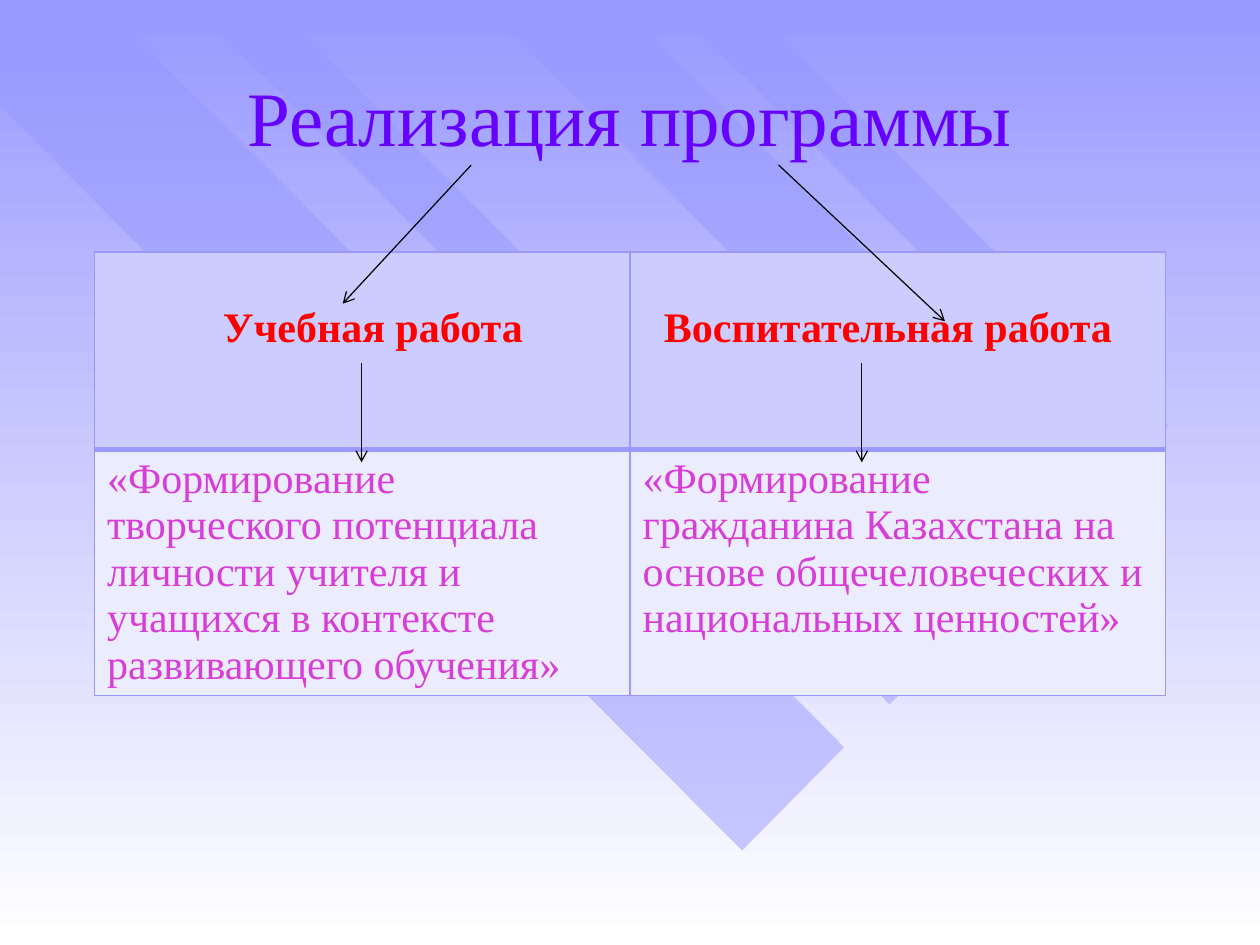
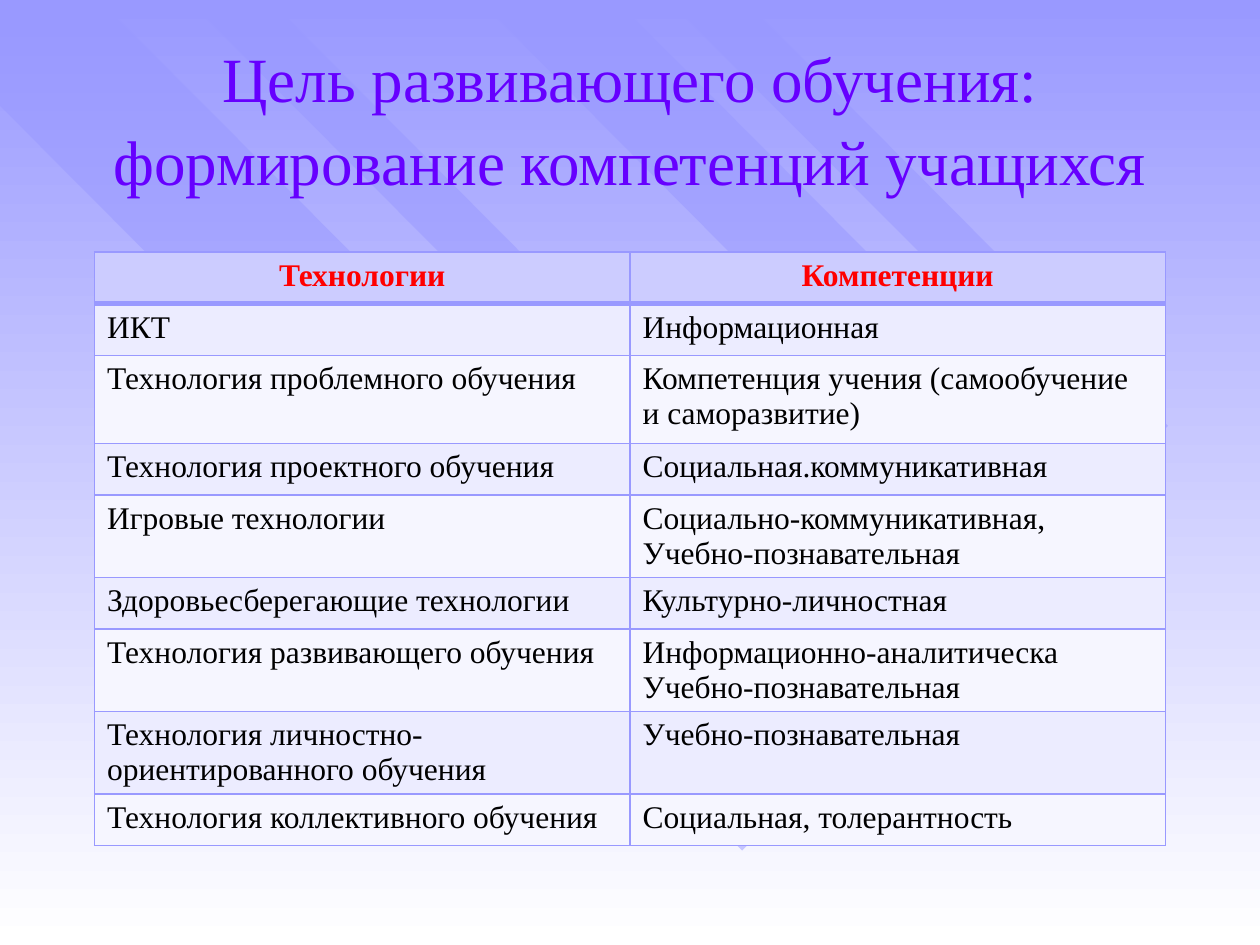
from dataclasses import dataclass

from lxml import etree
from pptx import Presentation, util as u
from pptx.dml.color import RGBColor
from pptx.enum import shapes, text
from pptx.oxml.ns import qn


@dataclass(frozen=True)
class Theme:
    """Colours, font and type sizes shared by the slides."""
    font: str = "Times New Roman"
    violet: str = "9999FF"
    white: str = "FFFFFF"
    title: str = "6600FF"
    heading: str = "FF0000"
    goal: str = "D73DD7"
    black: str = "000000"
    arrow: str = "0D0D0D"
    header_fill: str = "CCCCFF"
    odd_fill: str = "ECECFF"
    even_fill: str = "F6F6FF"
    title_size: int = 44
    long_title_size: int = 36
    goal_size: int = 24
    table_size: int = 18
    border: int = 1
    header_border: int = 3


THEME = Theme()
TABLE_LEFT, TABLE_TOP, COLUMN_WIDTH = 0.75, 2, 4.25

BANDS = [
    [(6.7, 5.93), (0.79, 0), (0, 0), (0, 0.84), (5.89, 6.75)],
    [(2.14, 0), (7.38, 5.27), (7.06, 5.59), (1.49, 0)],
    [(4.89, 0), (8.76, 3.89), (8.21, 4.44), (3.8, 0)],
    [(5.3, 0), (8.97, 3.68), (9.27, 3.38), (5.91, 0)],
]

PROGRAMME = [
    ("Учебная работа", "Воспитательная работа"),
    ("«Формирование творческого потенциала личности учителя и учащихся "
     "в контексте развивающего обучения»",
     "«Формирование гражданина Казахстана на основе общечеловеческих "
     "и национальных ценностей»"),
]
PROGRAMME_HEIGHTS = [1.57, 1.95]
HEADING_INDENTS = [1.02, 0.27]

ARROWS = [
    ((3.74, 1.31), (2.72, 2.41)),
    ((6.18, 1.31), (7.5, 2.55)),
    ((2.87, 2.88), (2.87, 3.67)),
    ((6.84, 2.88), (6.84, 3.67)),
]

COMPETENCES = [
    ("Технологии", "Компетенции"),
    ("ИКТ", "Информационная"),
    ("Технология проблемного обучения",
     "Компетенция учения (самообучение и саморазвитие)"),
    ("Технология проектного обучения", "Социальная.коммуникативная"),
    ("Игровые технологии",
     "Социально-коммуникативная,\nУчебно-познавательная"),
    ("Здоровьесберегающие технологии", "Культурно-личностная"),
    ("Технология развивающего обучения",
     "Информационно-аналитическа\nУчебно-познавательная"),
    ("Технология личностно-ориентированного обучения",
     "Учебно-познавательная"),
    ("Технология коллективного обучения", "Социальная, толерантность"),
]
COMPETENCE_HEIGHTS = [0.41, 0.41, 0.7, 0.41, 0.65, 0.41, 0.65, 0.65, 0.41]


def rgb(value):
    """Turn a hex string into a colour."""
    return RGBColor.from_string(value)


def put_text(frame, wording, *, size, color, bold=False,
             align=text.PP_ALIGN.LEFT, spacing=None):
    """Fill a text frame with formatted paragraphs, one per line."""
    frame.text = wording
    for paragraph in frame.paragraphs:
        paragraph.alignment = align
        if spacing:
            paragraph.line_spacing = spacing
        for run in paragraph.runs:
            run.font.name = THEME.font
            run.font.size = u.Pt(size)
            run.font.bold = bold
            run.font.color.rgb = rgb(color)


def paint_background(master):
    """Give the master its vertical violet to white gradient."""
    fill = master.background.fill
    fill.gradient()
    fill.gradient_angle = 270
    for stop, color, position in zip(
            fill.gradient_stops, (THEME.violet, THEME.white), (0, 1)):
        stop.color.rgb = rgb(color)
        stop.position = position


def add_bands(slide):
    """Draw the translucent diagonal bands on the layout of a slide."""
    layout_tree = slide.slide_layout.shapes._spTree
    for order, corners in enumerate(BANDS):
        start, *others = [(u.Inches(x), u.Inches(y)) for x, y in corners]
        builder = slide.shapes.build_freeform(*start)
        builder.add_line_segments(others, close=True)
        band = builder.convert_to_shape()
        band.shadow.inherit = False
        band.line.fill.background()
        band.fill.solid()
        band.fill.fore_color.rgb = rgb(THEME.violet)
        tint = band._element.spPr.find(".//" + qn("a:srgbClr"))
        etree.SubElement(tint, qn("a:alpha"), val="50000")
        band._element.nvSpPr.cNvPr.set("id", str(100 + order))
        layout_tree.insert(2 + order, band._element)


def place_title(layout):
    """Set the title area that the slides inherit."""
    title = layout.placeholders[0]
    title.left, title.top = u.Inches(0.75), u.Inches(0.25)
    title.width, title.height = u.Inches(8.5), u.Inches(1.33)


def write_title(slide, wording, size, spacing=None):
    """Write the title of a slide."""
    frame = slide.shapes.title.text_frame
    put_text(frame, wording, size=size, color=THEME.title,
             align=text.PP_ALIGN.CENTER, spacing=spacing)
    frame.word_wrap = True
    frame.auto_size = text.MSO_AUTO_SIZE.NONE
    frame.vertical_anchor = text.MSO_ANCHOR.MIDDLE


def add_borders(cell, top, bottom):
    """Outline a cell with the given top and bottom widths."""
    widths = {"L": THEME.border, "R": THEME.border, "T": top, "B": bottom}
    properties = cell._tc.get_or_add_tcPr()
    for side, width in widths.items():
        line = etree.SubElement(properties, qn(f"a:ln{side}"),
                                w=str(u.Pt(width)))
        solid = etree.SubElement(line, qn("a:solidFill"))
        etree.SubElement(solid, qn("a:srgbClr"), val=THEME.violet)


def add_grid(slide, rows, heights, *, size, color, heading_align):
    """Add a two-column table with a heading row and striped body."""
    table = slide.shapes.add_table(
        len(rows), 2, u.Inches(TABLE_LEFT), u.Inches(TABLE_TOP),
        u.Inches(2 * COLUMN_WIDTH), u.Inches(sum(heights))).table
    for column in table.columns:
        column.width = u.Inches(COLUMN_WIDTH)
    for index, (wordings, height) in enumerate(zip(rows, heights)):
        table.rows[index].height = u.Inches(height)
        heading = index == 0
        stripe = THEME.odd_fill if index % 2 else THEME.even_fill
        for cell, wording in zip(table.rows[index].cells, wordings):
            put_text(cell.text_frame, wording, size=size, bold=heading,
                     color=THEME.heading if heading else color,
                     align=heading_align if heading else text.PP_ALIGN.LEFT)
            add_borders(
                cell,
                top=THEME.header_border if index == 1 else THEME.border,
                bottom=THEME.header_border if heading else THEME.border)
            cell.fill.solid()
            cell.fill.fore_color.rgb = rgb(
                THEME.header_fill if heading else stripe)
    return table


def add_arrow(slide, start, end):
    """Draw a thin arrow between two points."""
    arrow = slide.shapes.add_connector(
        shapes.MSO_CONNECTOR.STRAIGHT,
        *(u.Inches(value) for value in (*start, *end)))
    arrow.line.color.rgb = rgb(THEME.arrow)
    arrow.line.width = u.Pt(0.75)
    etree.SubElement(arrow.line._get_or_add_ln(), qn("a:tailEnd"),
                     type="arrow")
    etree.SubElement(arrow._element.spPr, qn("a:effectLst"))


def build_programme(slide):
    """Show the two branches of the programme."""
    write_title(slide, "Реализация программы", THEME.title_size)
    branches = add_grid(slide, PROGRAMME, PROGRAMME_HEIGHTS,
                        size=THEME.goal_size, color=THEME.goal,
                        heading_align=text.PP_ALIGN.LEFT)
    for heading, indent in zip(branches.rows[0].cells, HEADING_INDENTS):
        heading.margin_left = u.Inches(indent)
        heading.margin_top = u.Inches(0.42)
    for start, end in ARROWS:
        add_arrow(slide, start, end)


def build_competences(slide):
    """Match teaching technologies with competences."""
    write_title(slide, "Цель развивающего обучения: формирование "
                "компетенций учащихся", THEME.long_title_size, spacing=1.09)
    add_grid(slide, COMPETENCES, COMPETENCE_HEIGHTS,
             size=THEME.table_size, color=THEME.black,
             heading_align=text.PP_ALIGN.CENTER)


def main():
    """Build and save the presentation."""
    deck = Presentation()
    deck.slide_width, deck.slide_height = u.Inches(10), u.Inches(7.5)
    layout = deck.slide_layouts[5]
    paint_background(deck.slide_master)
    place_title(layout)
    programme = deck.slides.add_slide(layout)
    add_bands(programme)
    build_programme(programme)
    build_competences(deck.slides.add_slide(layout))
    deck.save("out.pptx")


if __name__ == "__main__":
    main()
